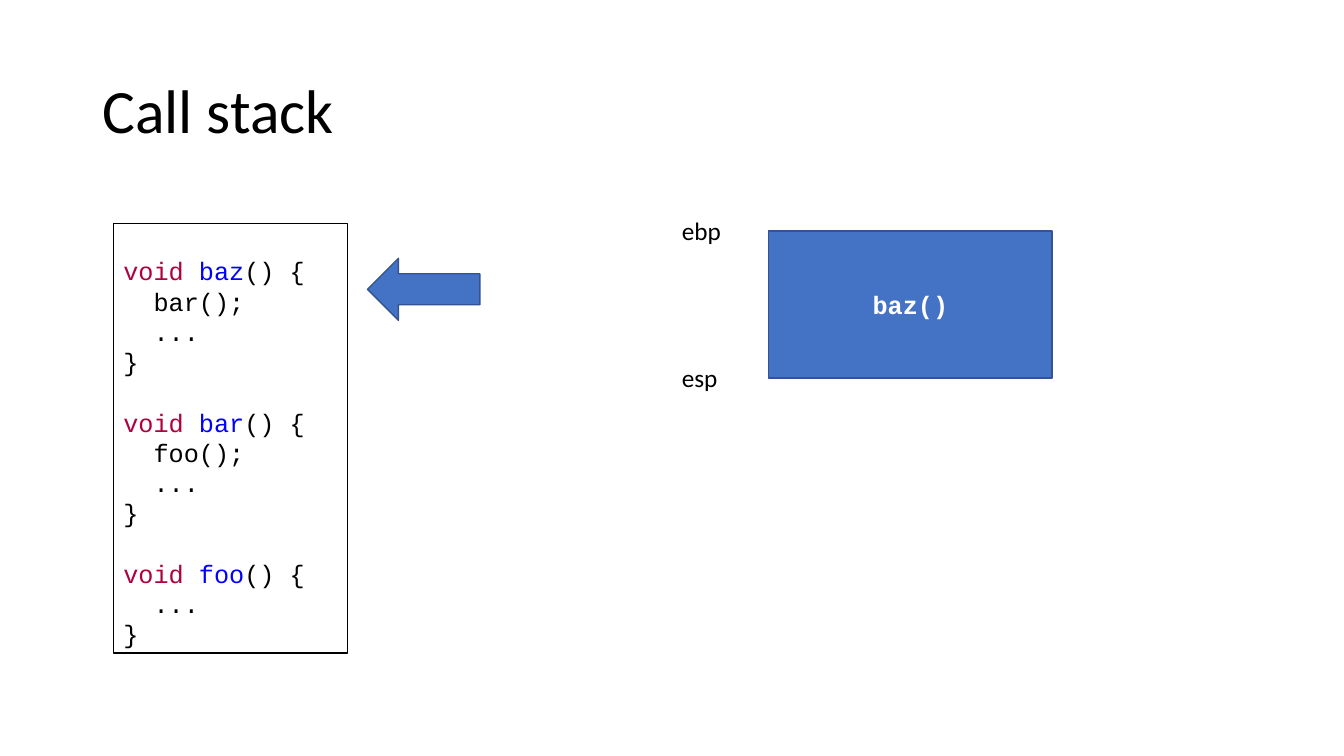
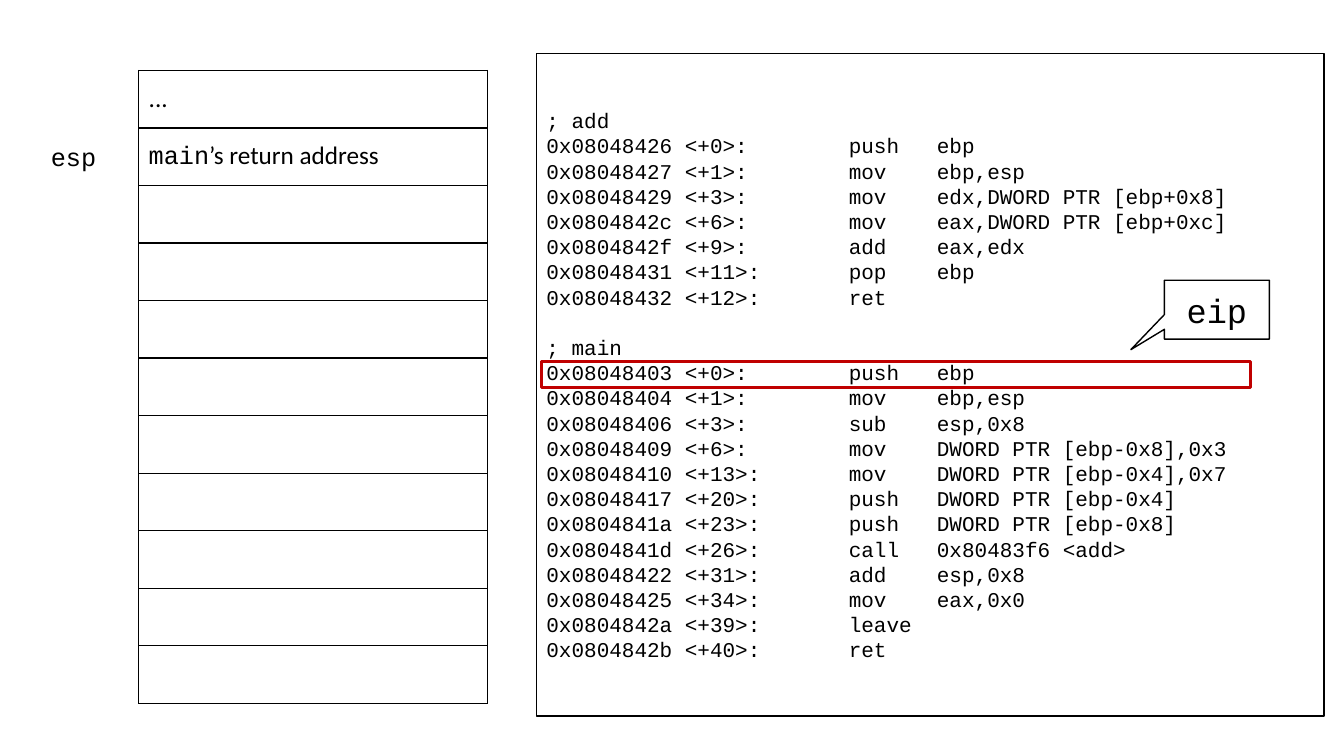
from dataclasses import dataclass, field
from typing import Any

from lxml.etree import SubElement as Sub
from pptx import Presentation as Deck
from pptx.dml.color import RGBColor as Rgb
from pptx.enum.shapes import MSO_SHAPE as Kind
from pptx.enum.text import MSO_ANCHOR as Anchor, PP_ALIGN as Align
from pptx.oxml.ns import qn
from pptx.util import Emu, Pt

SCALE = 9525
SANS, MONO = "Calibri", "Courier New"
BLACK, WHITE, BLUE, NAVY = "000000", "FFFFFF", "4472C4", "325491"
RED, WINE, INK = "C00000", "B00040", "0000FF"
LEAD, TAB = 1.2, 288

FUNCS = {"baz": ["bar();", "..."], "bar": ["foo();", "..."], "foo": ["..."]}
ADD = """; add
0x08048426 <+0>:\tpush   ebp
0x08048427 <+1>:\tmov    ebp,esp
0x08048429 <+3>:\tmov    edx,DWORD PTR [ebp+0x8]
0x0804842c <+6>:\tmov    eax,DWORD PTR [ebp+0xc]
0x0804842f <+9>:\tadd    eax,edx
0x08048431 <+11>:\tpop    ebp
0x08048432 <+12>:\tret"""
MAIN = """; main
0x08048403 <+0>:\tpush   ebp
0x08048404 <+1>:\tmov    ebp,esp
0x08048406 <+3>:\tsub    esp,0x8
0x08048409 <+6>:\tmov    DWORD PTR [ebp-0x8],0x3
0x08048410 <+13>:\tmov    DWORD PTR [ebp-0x4],0x7
0x08048417 <+20>:\tpush   DWORD PTR [ebp-0x4]
0x0804841a <+23>:\tpush   DWORD PTR [ebp-0x8]
0x0804841d <+26>:\tcall   0x80483f6 <add>
0x08048422 <+31>:\tadd    esp,0x8
0x08048425 <+34>:\tmov    eax,0x0
0x0804842a <+39>:\tleave
0x0804842b <+40>:\tret"""


@dataclass
class Run:
    """A piece of text in one font and colour."""
    text: str
    font: str = MONO
    color: str = BLACK
    size: int = 18
    bold: bool = False


@dataclass
class Line:
    """A paragraph of runs with its format values."""
    runs: list[Run]
    form: dict[str, Any] = field(default_factory=dict)


@dataclass
class Box:
    """A placed shape, or a plain text box when it has no kind."""
    at: tuple[int, int, int, int]
    lines: list[Line] = field(default_factory=list)
    kind: Any = None
    fill: str | None = WHITE
    edge: str = BLACK
    width: int = 1
    frame: dict[str, Any] = field(default_factory=dict)
    bends: tuple[float, ...] = ()


def px(num: int) -> Emu:
    """Turn pixels into EMU."""
    return Emu(num * SCALE)


def rgb(code: str) -> Rgb:
    """Turn a hex string into a colour."""
    return Rgb.from_string(code)


def put(item: Any, vals: dict[str, Any]) -> None:
    """Set each value as an attribute of the item."""
    for key, val in vals.items():
        setattr(item, key, val)


def align(para: Any) -> None:
    """Put a tab stop where the opcodes start."""
    stops = Sub(para._p.get_or_add_pPr(), qn("a:tabLst"))
    Sub(stops, qn("a:tab"), pos=str(px(TAB)), algn="l")


def write(frame: Any, lines: list[Line]) -> None:
    """Fill a text frame with lines."""
    for num, line in enumerate(lines):
        para = frame.add_paragraph() if num else frame.paragraphs[0]
        put(para, {"alignment": Align.LEFT} | line.form)
        if any("\t" in run.text for run in line.runs):
            align(para)
        for run in line.runs:
            part = para.add_run()
            part.text = run.text
            put(part.font, {"name": run.font, "size": Pt(run.size), "bold": run.bold})
            part.font.color.rgb = rgb(run.color)


def draw(slide: Any, box: Box) -> None:
    """Draw one box on the slide."""
    place = [px(num) for num in box.at]
    if box.kind is None:
        shape = slide.shapes.add_textbox(*place)
    else:
        shape = slide.shapes.add_shape(box.kind, *place)
        shape.shadow.inherit = False
        if box.fill:
            shape.fill.solid()
            shape.fill.fore_color.rgb = rgb(box.fill)
        else:
            shape.fill.background()
        shape.line.color.rgb = rgb(box.edge)
        shape.line.width = Pt(box.width)
    for num, bend in enumerate(box.bends):
        shape.adjustments[num] = bend
    put(shape.text_frame, {"word_wrap": True} | box.frame)
    write(shape.text_frame, box.lines)


def border(cell: Any) -> None:
    """Give a cell thin black borders."""
    props = cell._tc.get_or_add_tcPr()
    for side in ("lnL", "lnR", "lnT", "lnB"):
        edge = Sub(props, qn(f"a:{side}"), w=str(Pt(1)))
        Sub(Sub(edge, qn("a:solidFill")), qn("a:srgbClr"), val=BLACK)


def stack(slide: Any, at: tuple[int, int, int, int], rows: list[list[Run]]) -> None:
    """Draw the stack as a table with one column."""
    place = [px(num) for num in at]
    table = slide.shapes.add_table(len(rows), 1, *place).table
    put(table, {"first_row": False, "horz_banding": False})
    for num, runs in enumerate(rows):
        table.rows[num].height = Emu(place[3] // len(rows))
        cell = table.cell(num, 0)
        border(cell)
        cell.fill.background()
        cell.vertical_anchor = Anchor.MIDDLE
        write(cell.text_frame, [Line(runs)])


def pitch(size: int, gap: bool = False) -> dict[str, Any]:
    """Give the line pitch of code, with an empty line above if asked."""
    step = Pt(size * LEAD)
    return {"line_spacing": step, "space_before": step if gap else Pt(0)}


def source() -> list[Line]:
    """Build the coloured C code."""
    lines = []
    for name, body in FUNCS.items():
        head = [Run("void ", color=WINE), Run(name, color=INK), Run("() {")]
        lines.append(Line(head, pitch(18, bool(lines))))
        rest = [f"  {text}" for text in body] + ["}"]
        lines += [Line([Run(text)], pitch(18)) for text in rest]
    return lines


def dump() -> list[Line]:
    """Build the assembly code."""
    return [Line([Run(text, size=15)], pitch(15, block is MAIN and num == 0))
            for block in (ADD, MAIN) for num, text in enumerate(block.split("\n"))]


def label(text: str, **form: Any) -> list[Line]:
    """Build one centred line of code."""
    return [Line([Run(text, **form)], {"alignment": Align.CENTER})]


def main() -> None:
    """Build and save the two slides."""
    deck = Deck()
    put(deck, {"slide_width": px(1280), "slide_height": px(720)})
    calls, trace = (deck.slides.add_slide(deck.slide_layouts[6]) for _ in range(2))
    mid = {"vertical_anchor": Anchor.MIDDLE}
    low = {"vertical_anchor": Anchor.BOTTOM, "margin_bottom": px(4)}

    title = Line([Run("Call stack", SANS, size=44)], {"line_spacing": 0.9})
    draw(calls, Box((88, 39, 1104, 139), [title], frame=mid))
    draw(calls, Box((108, 213, 223, 409), source(), Kind.RECTANGLE, frame=low))
    draw(calls, Box((732, 220, 270, 140), label("baz()", color=WHITE, bold=True),
                    Kind.RECTANGLE, BLUE, NAVY, frame=mid))
    for name, top in (("ebp", 200), ("esp", 340)):
        draw(calls, Box((640, top, 60, 38), [Line([Run(name, SANS)])]))
    draw(calls, Box((350, 246, 107, 59), kind=Kind.LEFT_ARROW, fill=BLUE, edge=NAVY))

    draw(trace, Box((511, 51, 750, 631), dump(), Kind.RECTANGLE, frame=mid))
    draw(trace, Box((516, 344, 675, 25), kind=Kind.RECTANGLE, fill=None,
                    edge=RED, width=2))
    rows = [[Run("...", SANS)], [Run("main"), Run("’s return address", SANS)]]
    stack(trace, (132, 67, 332, 603), rows + [[] for _ in range(9)])
    draw(trace, Box((1109, 267, 100, 56), label("eip", size=24),
                    Kind.RECTANGULAR_CALLOUT, frame=mid, bends=(-0.82, 0.68)))
    draw(trace, Box((32, 130, 76, 38), label("esp")))
    deck.save("out.pptx")


if __name__ == "__main__":
    main()
